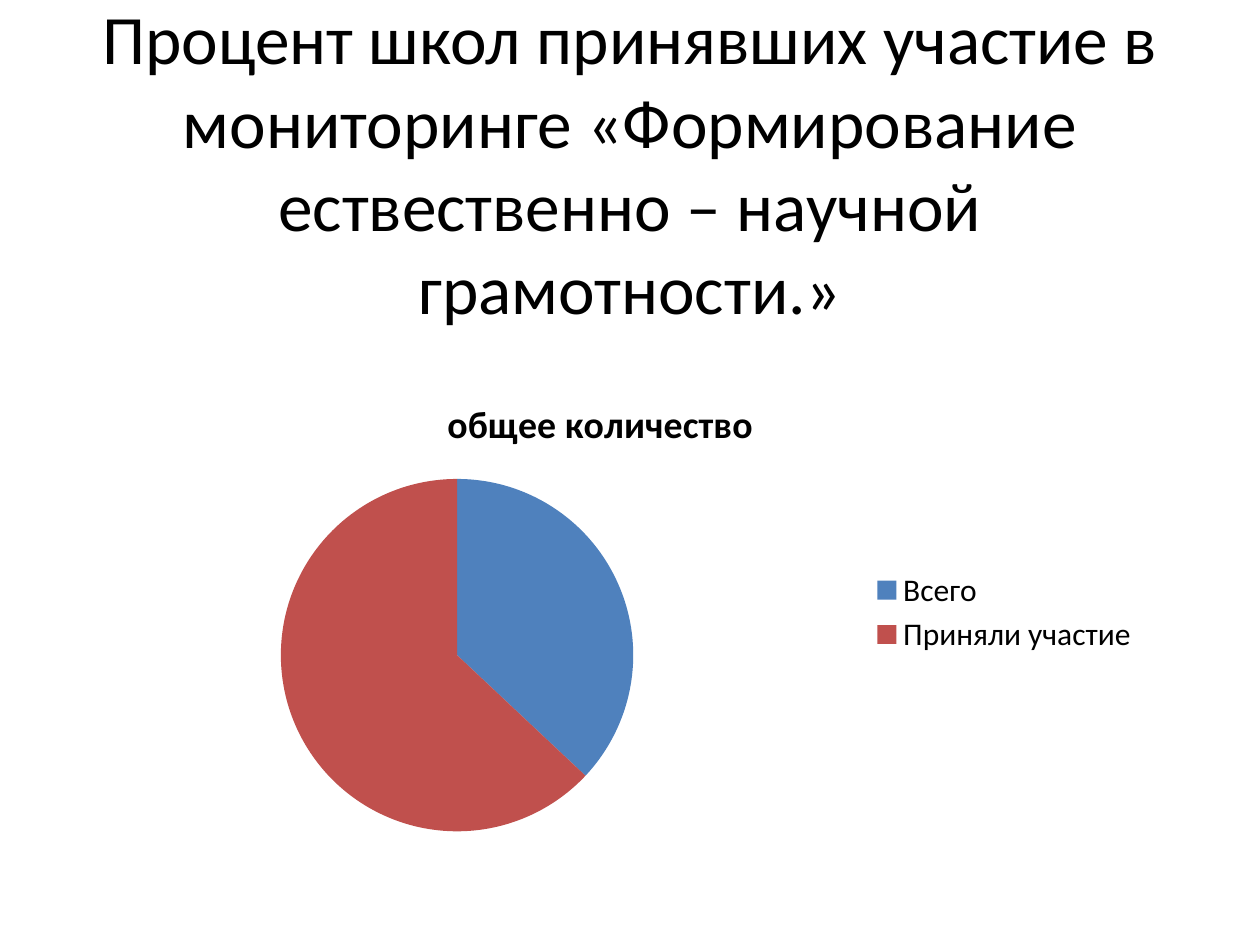
from lxml import etree
from pptx import Presentation
from pptx.chart.data import CategoryChartData
from pptx.dml.color import RGBColor
from pptx.enum.chart import XL_CHART_TYPE, XL_LEGEND_POSITION
from pptx.enum.text import MSO_ANCHOR, PP_ALIGN
from pptx.oxml.ns import qn
from pptx.util import Inches, Pt

BLACK = RGBColor(0x00, 0x00, 0x00)
BLUE = RGBColor(0x4F, 0x81, 0xBD)
RED = RGBColor(0xC0, 0x50, 0x4D)
FONT = "Calibri"

prs = Presentation()
prs.slide_width, prs.slide_height = Inches(10), Inches(7.5)
slide = prs.slides.add_slide(prs.slide_layouts[5])

# Heading
heading = slide.shapes.title
heading.left, heading.top = Inches(0.5), Inches(0.3)
heading.width, heading.height = Inches(9), Inches(1.97)
heading.text_frame.text = (
    "Процент школ принявших участие в мониторинге "
    "«Формирование ествественно – научной грамотности.»"
)
heading.text_frame.vertical_anchor = MSO_ANCHOR.MIDDLE
heading_line = heading.text_frame.paragraphs[0]
heading_line.alignment = PP_ALIGN.CENTER
heading_line.font.size = Pt(39.6)
heading_line.font.name = FONT
heading_line.font.color.rgb = BLACK

# Participation pie
participation = CategoryChartData()
participation.categories = ["Всего ", "Приняли участие"]
participation.add_series("общее количество", (37, 63))
pie = slide.shapes.add_chart(
    XL_CHART_TYPE.PIE, Inches(0.39), Inches(2.97), Inches(8.75), Inches(3.78),
    participation,
).chart
pie.font.name = FONT
pie.font.size = Pt(18)
pie.font.color.rgb = BLACK

pie.has_title = True
pie.chart_title.text_frame.text = "общее количество"
caption = pie.chart_title.text_frame.paragraphs[0]
caption.font.name = FONT
caption.font.size = Pt(21.6)
caption.font.bold = True
caption.font.color.rgb = BLACK

pie.has_legend = True
pie.legend.position = XL_LEGEND_POSITION.RIGHT
pie.legend.include_in_layout = True

plot = pie.plots[0]
plot.vary_by_categories = True
for index, color in enumerate((BLUE, RED)):
    slice_fill = plot.series[0].points[index].format.fill
    slice_fill.solid()
    slice_fill.fore_color.rgb = color

# Fixed plot area, as fractions of the chart frame
plot_area = pie.element.find(".//" + qn("c:plotArea"))
layout = plot_area.find(qn("c:layout"))
if layout is None:
    layout = etree.Element(qn("c:layout"))
    plot_area.insert(0, layout)
manual = etree.SubElement(layout, qn("c:manualLayout"))
for tag, value in (
    ("layoutTarget", "inner"), ("xMode", "edge"), ("yMode", "edge"),
    ("x", "0.21"), ("y", "0.22"), ("w", "0.32"), ("h", "0.74"),
):
    etree.SubElement(manual, qn(f"c:{tag}")).set("val", value)

prs.save("out.pptx")
